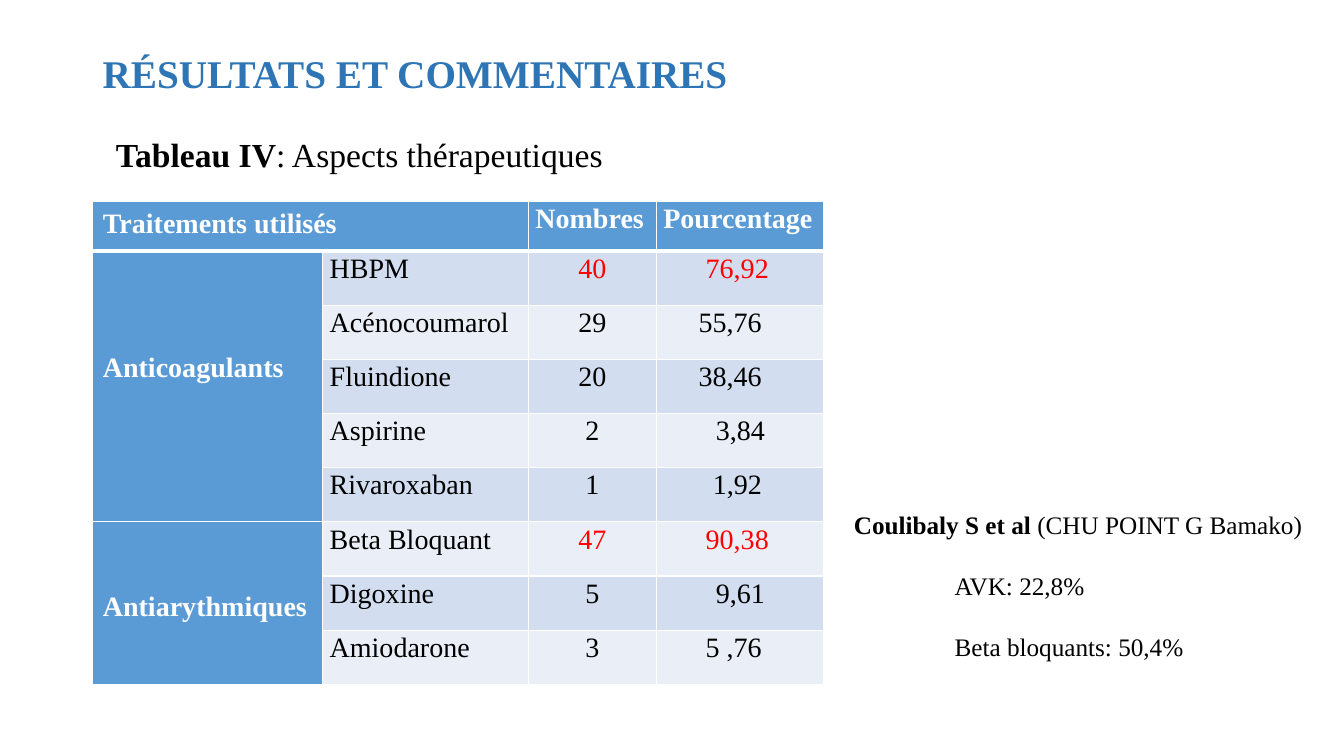
import pptx
import pptx.dml.color
import pptx.enum.text
import pptx.oxml
import pptx.oxml.ns
import pptx.util
from pptx.util import Inches

FONT = "Times New Roman"
COLORS = {
    "title": "2E75B6",
    "header": "5B9BD5",
    "band_dark": "D2DEEF",
    "band_light": "EAEFF7",
    "highlight": "FF0000",
    "black": "000000",
    "white": "FFFFFF",
}
COLUMN_WIDTHS = [2.28, 2.04, 1.27, 1.66]
HEADER_HEIGHT = 0.49
HEADERS = [(0, "Traitements utilisés"), (2, "Nombres"), (3, "Pourcentage")]
GROUPS = [("Anticoagulants", 1, 5, 1.01), ("Antiarythmiques", 6, 8, 0.69)]
TREATMENTS = [
    ("HBPM", "40", "76,92", 0.49),
    ("Acénocoumarol", "29", "55,76", 0.42),
    ("Fluindione", "20", "38,46", 0.42),
    ("Aspirine", "2", "3,84", 0.59),
    ("Rivaroxaban", "1", "1,92", 0.56),
    ("Beta Bloquant", "47", "90,38", 0.49),
    ("Digoxine", "5", "9,61", 0.59),
    ("Amiodarone", "3", "5 ,76", 0.49),
]
HIGHLIGHTED = {"HBPM", "Beta Bloquant"}


def rgb(name):
    return pptx.dml.color.RGBColor.from_string(COLORS[name])


def add_run(paragraph, text, size, color="black", bold=False):
    run = paragraph.add_run()
    run.text = text
    run.font.name = FONT
    run.font.size = pptx.util.Pt(size)
    run.font.bold = bold
    run.font.color.rgb = rgb(color)


def add_text_frame(slide, box):
    shape = slide.shapes.add_textbox(*map(Inches, box))
    shape.text_frame.word_wrap = True
    return shape.text_frame


def add_title(slide, box):
    frame = add_text_frame(slide, box)
    frame.vertical_anchor = pptx.enum.text.MSO_ANCHOR.MIDDLE
    paragraph = frame.paragraphs[0]
    paragraph.line_spacing = 0.9
    add_run(paragraph, "RÉSULTATS ET COMMENTAIRES", 28, "title", True)


def add_caption(slide, box):
    paragraph = add_text_frame(slide, box).paragraphs[0]
    add_run(paragraph, "Tableau IV", 24, bold=True)
    add_run(paragraph, ": Aspects thérapeutiques", 24)


def set_border(cell, side, width):
    properties = cell._tc.get_or_add_tcPr()
    line = pptx.oxml.parse_xml(
        f'<a:ln{side} {pptx.oxml.ns.nsdecls("a")} w="{pptx.util.Pt(width)}">'
        f'<a:solidFill><a:srgbClr val="{COLORS["white"]}"/></a:solidFill></a:ln{side}>'
    )
    properties.append(line)


def style_cell(cell, row, column):
    for side in "LRTB":
        thick = (side, row) in {("B", 0), ("T", 1)}
        set_border(cell, side, 3 if thick else 1)
    if row == 0 or column == 0:
        fill = "header"
    else:
        fill = "band_dark" if row % 2 else "band_light"
    cell.fill.solid()
    cell.fill.fore_color.rgb = rgb(fill)


def write_cell(cell, text, color="black", bold=False, left=0.07, top=0.0,
               centered=False, spacing=1.07):
    cell.margin_left = Inches(left)
    cell.margin_right = Inches(0.07)
    cell.margin_top = Inches(top)
    cell.margin_bottom = 0
    paragraph = cell.text_frame.paragraphs[0]
    paragraph.line_spacing = spacing
    if centered:
        paragraph.alignment = pptx.enum.text.PP_ALIGN.CENTER
    add_run(paragraph, text, 20, color, bold)


def add_treatment_table(slide, box):
    row_count = len(TREATMENTS) + 1
    table = slide.shapes.add_table(
        row_count, len(COLUMN_WIDTHS), *map(Inches, box)
    ).table
    table.first_row = False
    table.horz_banding = False
    for column, width in zip(table.columns, COLUMN_WIDTHS):
        column.width = Inches(width)
    row_height = (box[3] - HEADER_HEIGHT) / len(TREATMENTS)
    for index, row in enumerate(table.rows):
        row.height = Inches(row_height if index else HEADER_HEIGHT)
        for column, cell in enumerate(row.cells):
            style_cell(cell, index, column)

    table.cell(0, 0).merge(table.cell(0, 1))
    for column, text in HEADERS:
        left, top = (0.07, 0) if column else (0.1, 0.05)
        write_cell(table.cell(0, column), text, "white", True, left, top)
    for text, first, last, top in GROUPS:
        table.cell(first, 0).merge(table.cell(last, 0))
        write_cell(table.cell(first, 0), text, "white", True, 0.1, top, spacing=1.0)
    for row, (name, count, percentage, left) in enumerate(TREATMENTS, 1):
        color = "highlight" if name in HIGHLIGHTED else "black"
        write_cell(table.cell(row, 1), name)
        write_cell(table.cell(row, 2), count, color, centered=True)
        write_cell(table.cell(row, 3), percentage, color, left=left)


def add_comparison(slide, box):
    frame = add_text_frame(slide, box)
    paragraph = frame.paragraphs[0]
    add_run(paragraph, "Coulibaly S et al ", 18, bold=True)
    add_run(paragraph, "(CHU POINT G Bamako)", 18)
    for text in ("AVK: 22,8%", "Beta bloquants: 50,4%"):
        paragraph = frame.add_paragraph()
        paragraph.space_before = pptx.util.Pt(22)
        paragraph._p.get_or_add_pPr().set("marL", str(Inches(1)))
        add_run(paragraph, text, 18)


def main():
    presentation = pptx.Presentation()
    presentation.slide_width = Inches(13.33)
    presentation.slide_height = Inches(7.5)
    slide = presentation.slides.add_slide(presentation.slide_layouts[6])
    add_title(slide, (0.92, 0.4, 11.5, 0.71))
    add_treatment_table(slide, (0.92, 2, 7.25, 4.79))
    add_comparison(slide, (8.37, 5, 4.68, 2.29))
    add_caption(slide, (1.05, 1.28, 6.28, 0.5))
    presentation.save("out.pptx")


if __name__ == "__main__":
    main()
